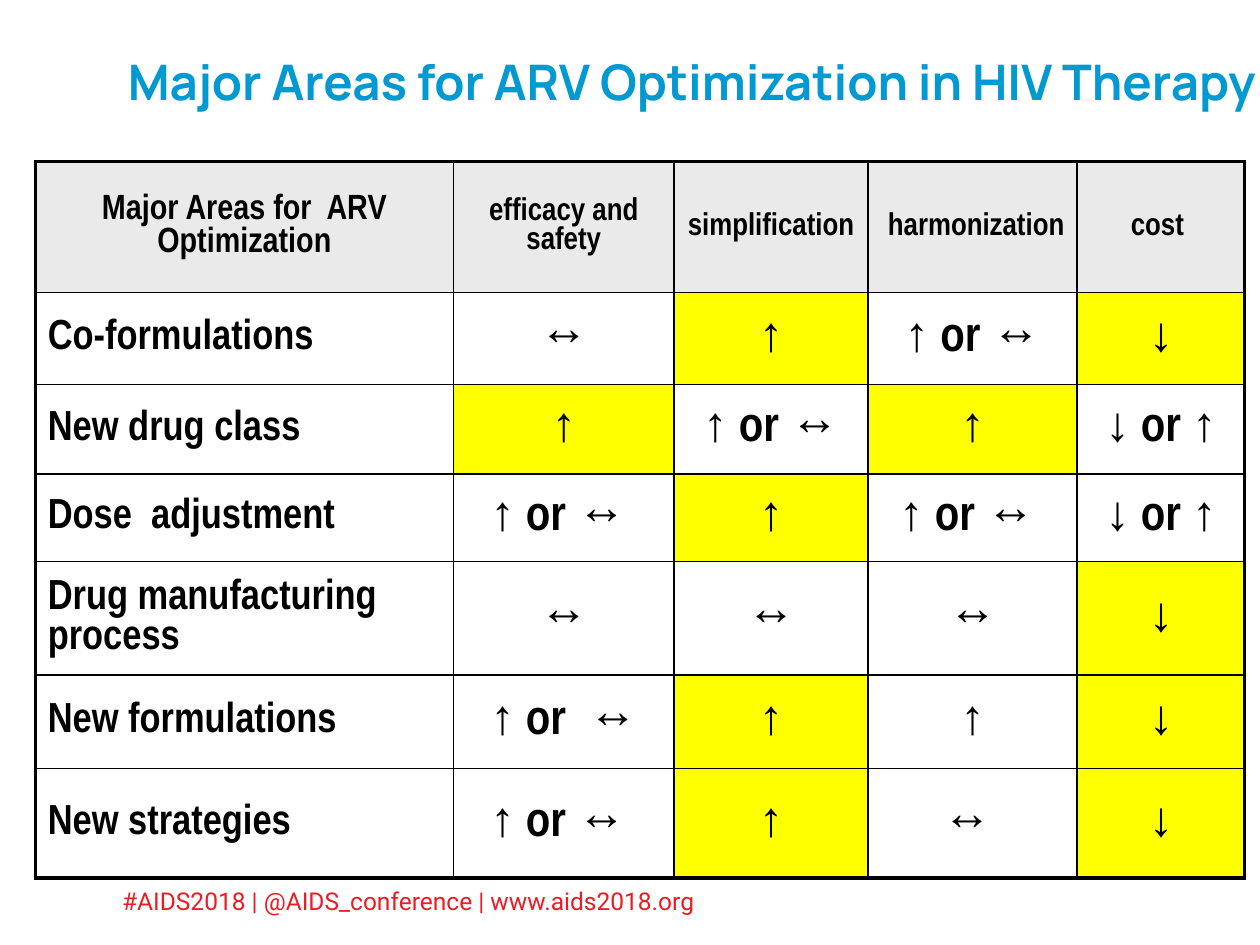
from lxml import etree
from pptx import Presentation
from pptx.dml.color import RGBColor
from pptx.enum.text import MSO_ANCHOR, PP_ALIGN
from pptx.oxml.ns import qn
from pptx.util import Pt

LEFT, CENTER = PP_ALIGN.LEFT, PP_ALIGN.CENTER
MIDDLE = MSO_ANCHOR.MIDDLE
BLACK = RGBColor(0x00, 0x00, 0x00)
WHITE = RGBColor(0xFF, 0xFF, 0xFF)
GRAY = RGBColor(0xEA, 0xEA, 0xEA)
YELLOW = RGBColor(0xFF, 0xFF, 0x00)
BLUE = RGBColor(0x00, 0x99, 0xD2)
RED = RGBColor(0xED, 0x1C, 0x24)

TITLE_BOX = (57.6, 1.44, 675.36, 90)
TABLE_BOX = (20.16, 92.16, 691.2, 409.68)
FOOTER_BOX = (62.64, 502.56, 539.28, 24.48)

COLUMN_WIDTHS = (239.04, 126, 110.88, 119.52, 95.76)
ROW_HEIGHTS = (75.1, 52.4, 51.2, 50.2, 63.2, 53.4, 62.5)
ROWS = (
    ("Major Areas for  ARV Optimization", "efficacy and safety", "simplification", " harmonization", "cost "),
    ("Co-formulations", "↔", "↑", "↑ or ↔", "↓"),
    ("New drug class", "↑", "↑ or ↔", "↑", "↓ or ↑"),
    ("Dose  adjustment", "↑ or ↔ ", "↑", "↑ or ↔ ", "↓ or ↑"),
    ("Drug manufacturing process", "↔", "↔", "↔", "↓"),
    ("New formulations", "↑ or  ↔", "↑", "↑", "↓"),
    ("New strategies", "↑ or ↔ ", "↑", "↔ ", "↓"),
)
YELLOW_COLUMNS = {1: (2, 4), 2: (1, 3), 3: (2,), 4: (4,), 5: (2, 4), 6: (2, 4)}
THIN, THICK = 1, 2.25

TITLE_FONT = {"name": "Manrope", "size": Pt(28), "bold": True}
TABLE_FONT = {"name": "Arial Narrow", "bold": True}
FOOTER_FONT = {"name": "Roboto", "size": Pt(14), "bold": False}


def write_text(text_frame, text, alignment, color, font_format):
    """Write one formatted paragraph into a text frame."""
    paragraph = text_frame.paragraphs[0]
    paragraph.alignment = alignment
    run = paragraph.add_run()
    run.text = text
    for name, value in font_format.items():
        setattr(run.font, name, value)
    run.font.color.rgb = color


def set_borders(cell, widths):
    """Draw solid black borders from a dict of side and width in points."""
    properties = cell._tc.get_or_add_tcPr()
    for side, width in widths.items():
        line = etree.SubElement(properties, qn(f"a:ln{side}"), w=str(Pt(width)))
        fill = etree.SubElement(line, qn("a:solidFill"))
        etree.SubElement(fill, qn("a:srgbClr"), val=str(BLACK))


def add_title(slide, box):
    """Place the slide title in its box."""
    title = slide.shapes.title
    title.left, title.top, title.width, title.height = map(Pt, box)
    title.text_frame.word_wrap = True
    title.text_frame.vertical_anchor = MIDDLE
    write_text(title.text_frame, "Major Areas for ARV Optimization in HIV Therapy", CENTER, BLUE, TITLE_FONT)


def format_cell(cell, row, column, text):
    """Write and style one cell according to its place in the grid."""
    is_header, is_label = row == 0, column == 0
    set_borders(cell, {
        "L": THICK if is_label else THIN,
        "R": THICK if column == len(COLUMN_WIDTHS) - 1 else THIN,
        "T": THICK if is_header else THIN,
        "B": THICK if row == len(ROWS) - 1 else THIN,
    })
    if is_label and not is_header:
        cell.fill.background()
    else:
        cell.fill.solid()
        highlighted = column in YELLOW_COLUMNS.get(row, ())
        cell.fill.fore_color.rgb = GRAY if is_header else YELLOW if highlighted else WHITE
    if is_header:
        size = 20 if is_label else 18
    else:
        size = 24 if is_label else 28
    alignment = LEFT if is_label and not is_header else CENTER
    cell.vertical_anchor = MIDDLE
    write_text(cell.text_frame, text, alignment, BLACK, {**TABLE_FONT, "size": Pt(size)})


def add_optimization_table(slide, box):
    """Place the table of optimization areas in its box."""
    frame = slide.shapes.add_table(len(ROWS), len(COLUMN_WIDTHS), *map(Pt, box))
    table = frame.table
    table.first_row = table.horz_banding = False
    for column, width in zip(table.columns, COLUMN_WIDTHS):
        column.width = Pt(width)
    for row, height in zip(table.rows, ROW_HEIGHTS):
        row.height = Pt(height)
    for row, texts in enumerate(ROWS):
        for column, text in enumerate(texts):
            format_cell(table.cell(row, column), row, column, text)


def add_footer(slide, box):
    """Place the conference line in its box."""
    footer = slide.shapes.add_textbox(*map(Pt, box))
    footer.text_frame.word_wrap = True
    write_text(footer.text_frame, "#AIDS2018 | @AIDS_conference | www.aids2018.org", LEFT, RED, FOOTER_FONT)


def main():
    """Build and save the presentation."""
    presentation = Presentation()
    presentation.slide_width, presentation.slide_height = Pt(720), Pt(540)
    slide = presentation.slides.add_slide(presentation.slide_layouts[5])
    add_footer(slide, FOOTER_BOX)
    add_title(slide, TITLE_BOX)
    add_optimization_table(slide, TABLE_BOX)
    presentation.save("out.pptx")


if __name__ == "__main__":
    main()
